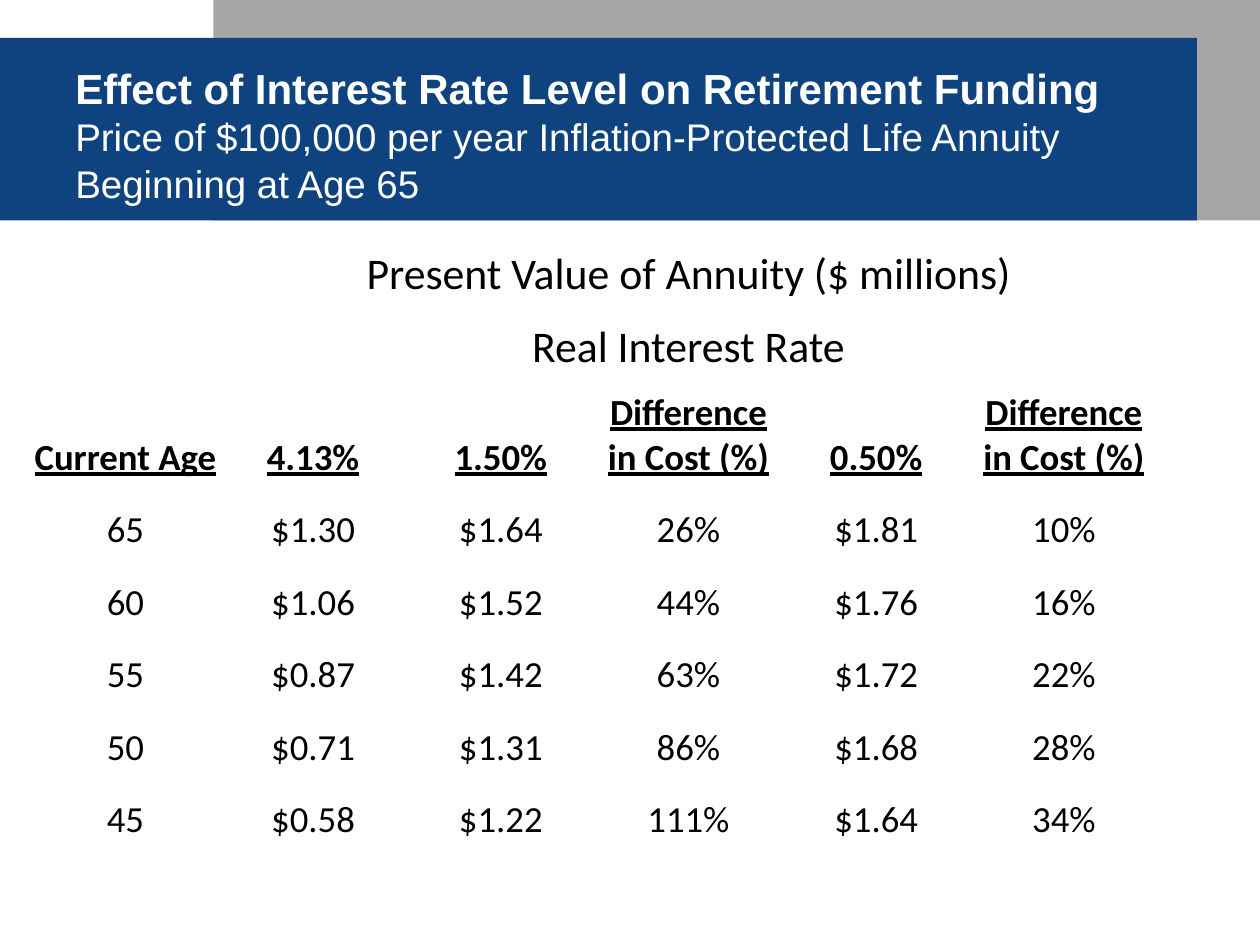
from pptx import Presentation
from pptx.dml.color import RGBColor
from pptx.enum.shapes import MSO_SHAPE as Preset
from pptx.enum.text import MSO_ANCHOR as Anchor, PP_ALIGN as Align
from pptx.util import Pt

COLORS = {"grey": "A6A6A6", "navy": "0F437F", "white": "FFFFFF", "black": "000000"}

SPANNING_HEADINGS = ["Present Value of Annuity ($ millions)", "Real Interest Rate"]
COLUMN_HEADINGS = ["Current Age", "4.13%", "1.50%", "Difference in Cost (%)",
                   "0.50%", "Difference in Cost (%)"]
ANNUITY_PRICES = [
    ["65", "$1.30", "$1.64", "26%", "$1.81", "10%"],
    ["60", "$1.06", "$1.52", "44%", "$1.76", "16%"],
    ["55", "$0.87", "$1.42", "63%", "$1.72", "22%"],
    ["50", "$0.71", "$1.31", "86%", "$1.68", "28%"],
    ["45", "$0.58", "$1.22", "111%", "$1.64", "34%"],
]
COLUMN_WIDTH, ROW_HEIGHT, HEADING_HEIGHT = 107.28, 41.45, 53.28


def add_text(paragraph, text, size, font="Calibri", color="black",
             bold=False, underline=False):
    run = paragraph.add_run()
    run.text = text
    run.font.size = Pt(size)
    run.font.name = font
    run.font.bold = bold
    run.font.underline = underline
    run.font.color.rgb = RGBColor.from_string(COLORS[color])


def add_band(slide, left, top, width, height, color):
    band = slide.shapes.add_shape(Preset.RECTANGLE, Pt(left), Pt(top), Pt(width), Pt(height))
    band.shadow.inherit = False
    band.fill.solid()
    band.fill.fore_color.rgb = RGBColor.from_string(COLORS[color])
    band.line.fill.background()


def add_title(slide):
    title = slide.shapes.add_textbox(Pt(36), Pt(36), Pt(648), Pt(102)).text_frame
    title.word_wrap = True
    title.margin_top = 0
    heading = title.paragraphs[0]
    add_text(heading, "Effect of Interest Rate Level on Retirement Funding", 24,
             font="Arial", color="white", bold=True)
    heading.add_line_break()
    add_text(heading, "Price of $100,000 per year Inflation-Protected Life Annuity "
             "Beginning at Age 65", 22, font="Arial", color="white")


def fill_cell(cell, text, size=21, **text_format):
    paragraph = cell.text_frame.paragraphs[0]
    paragraph.alignment = Align.CENTER
    add_text(paragraph, text, size, **text_format)


def fill_bottom_row(table, row, values, **text_format):
    for column, value in enumerate(values):
        cell = table.cell(row, column)
        cell.vertical_anchor = Anchor.BOTTOM
        cell.margin_left = cell.margin_right = cell.margin_top = Pt(0.75)
        cell.margin_bottom = 0
        fill_cell(cell, value, **text_format)


def add_annuity_table(slide):
    column_count = len(COLUMN_HEADINGS)
    heading_row = len(SPANNING_HEADINGS)
    row_count = heading_row + 1 + len(ANNUITY_PRICES)
    height = ROW_HEIGHT * (row_count - 1) + HEADING_HEIGHT
    table = slide.shapes.add_table(row_count, column_count, Pt(18), Pt(138.24),
                                   Pt(COLUMN_WIDTH * column_count), Pt(height)).table
    table.first_row = table.horz_banding = False
    for column in table.columns:
        column.width = Pt(COLUMN_WIDTH)
    for index, row in enumerate(table.rows):
        row.height = Pt(HEADING_HEIGHT if index == heading_row else ROW_HEIGHT)
    for cell in table.iter_cells():
        cell.fill.background()

    # Headings across the five rate columns
    for row, text in enumerate(SPANNING_HEADINGS):
        table.cell(row, 1).merge(table.cell(row, column_count - 1))
        fill_cell(table.cell(row, 1), text, size=25)

    # Column headings, then one row for each age
    fill_bottom_row(table, heading_row, COLUMN_HEADINGS, bold=True, underline=True)
    for row, prices in enumerate(ANNUITY_PRICES, heading_row + 1):
        fill_bottom_row(table, row, prices)


def main():
    deck = Presentation()
    deck.slide_width, deck.slide_height = Pt(720), Pt(540)
    slide = deck.slides.add_slide(deck.slide_layouts[6])

    # Header bands
    add_band(slide, 121.9, 0, 598.1, 126, "grey")
    add_band(slide, 0, 21.6, 684, 104.4, "navy")

    add_title(slide)
    add_annuity_table(slide)
    deck.save("out.pptx")


if __name__ == "__main__":
    main()
